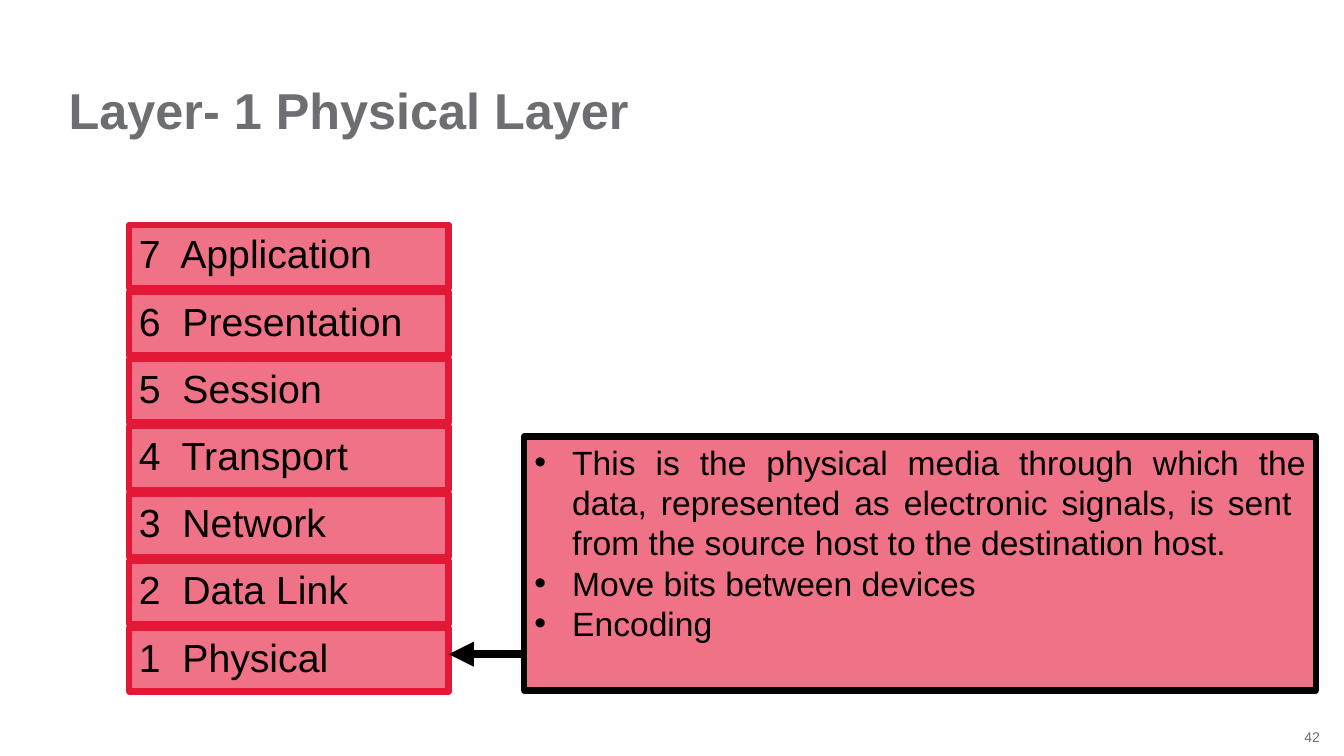
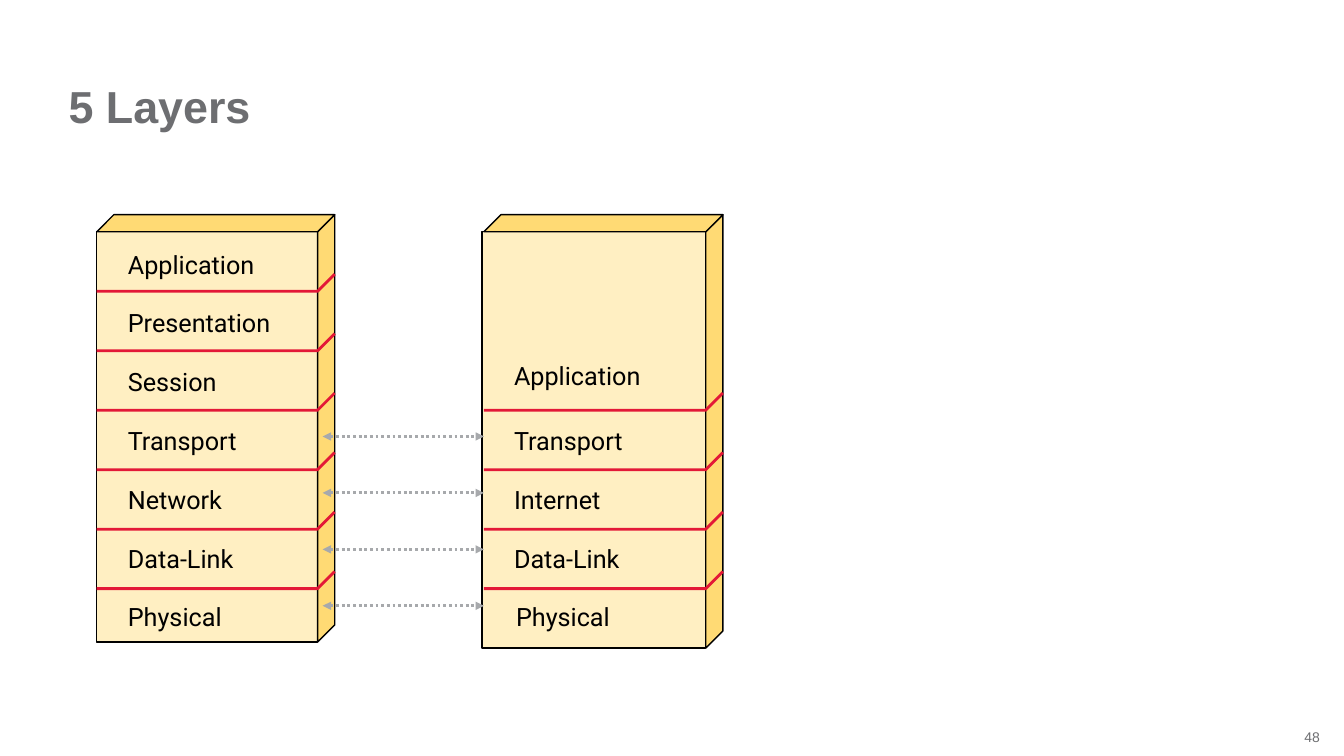
"""Build two slides on the physical layer and on the seven and five layer stacks."""
from dataclasses import dataclass

from lxml.etree import SubElement
from pptx import Presentation
from pptx.dml.color import RGBColor
from pptx.enum.dml import MSO_LINE
from pptx.enum.shapes import MSO_CONNECTOR, MSO_SHAPE
from pptx.enum.text import MSO_ANCHOR, MSO_AUTO_SIZE, PP_ALIGN
from pptx.oxml.ns import qn
from pptx.util import Inches, Pt


@dataclass(frozen=True)
class Theme:
    font: str = "Arial"
    label_font: str = "Roboto"
    grey: RGBColor = RGBColor.from_string("6D6E71")
    silver: RGBColor = RGBColor.from_string("A7A9AC")
    black: RGBColor = RGBColor.from_string("000000")
    red: RGBColor = RGBColor.from_string("E31837")
    pink: RGBColor = RGBColor.from_string("F07286")
    cream: RGBColor = RGBColor.from_string("FFEFC2")
    gold: RGBColor = RGBColor.from_string("FFDA74")
    title: int = 36
    title_small: int = 32
    layer: int = 28
    body: int = 24
    label: int = 18
    number: int = 10


T = Theme()


def paint(shape, fill, line, width):
    if fill is None:
        shape.fill.background()
    else:
        shape.fill.solid()
        shape.fill.fore_color.rgb = fill
    shape.line.color.rgb = line
    shape.line.width = Pt(width)
    shape.shadow.inherit = False


def write(shape, lines, size, color=T.black, font=T.font, align=PP_ALIGN.LEFT, bold=False):
    tf = shape.text_frame
    tf.text = "\n".join(lines)
    tf.word_wrap = True
    tf.auto_size = MSO_AUTO_SIZE.NONE
    tf.vertical_anchor = MSO_ANCHOR.TOP
    for p in tf.paragraphs:
        p.alignment = align
        p.space_before = Pt(0)
        p.font.name = font
        p.font.size = Pt(size)
        p.font.bold = bold
        p.font.color.rgb = color
    return tf


prs = Presentation()
prs.slide_width, prs.slide_height = Inches(13.33), Inches(7.5)

TITLE_AND_CONTENT, TITLE_ONLY = 1, 5
for layout, title, size, number in [
    (TITLE_AND_CONTENT, "Layer- 1 Physical Layer", T.title, "42"),
    (TITLE_ONLY, "5 Layers", T.title_small, "48"),
]:
    s = prs.slides.add_slide(prs.slide_layouts[layout])
    head = s.shapes.title
    head.left, head.top, head.width, head.height = map(Inches, (0.68, 0.78, 11.97, 0.54))
    page = s.shapes.add_textbox(Inches(12.59), Inches(7.23), Inches(0.5), Inches(0.17))
    for tf in (write(head, [title], size, T.grey, bold=True),
               write(page, [number], T.number, T.grey, align=PP_ALIGN.RIGHT)):
        tf.margin_left = tf.margin_top = tf.margin_right = tf.margin_bottom = 0
    page.text_frame.vertical_anchor = MSO_ANCHOR.MIDDLE

physical, stacks = prs.slides

layers = ["Application", "Presentation", "Session", "Transport", "Network", "Data Link", "Physical"]
for i, name in enumerate(layers):
    box = physical.shapes.add_shape(
        MSO_SHAPE.RECTANGLE, Inches(1.28), Inches(2.23 + i * 2 / 3), Inches(3.17), Inches(0.63))
    paint(box, T.pink, T.red, 4.5)
    write(box, [f"{len(layers) - i}  {name}"], T.layer)

body = physical.placeholders[1]
body.left, body.top, body.width, body.height = map(Inches, (5.2, 4.33, 7.85, 2.52))
body.fill.solid()
body.fill.fore_color.rgb = T.pink
body.line.color.rgb = T.black
body.line.width = Pt(4.5)
write(body, [
    "This is the physical media through which the data, represented as electronic signals, "
    "is sent  from the source host to the destination host.",
    "Move bits between devices",
    "Encoding",
], T.body, align=PP_ALIGN.JUSTIFY)

TOP, DEPTH, ROWS = 2.3, 0.17, 7
seven = ["Application", "Presentation", "Session", "Transport", "Network", "Data-Link", "Physical"]
five = ["Application", "Transport", "Internet", "Data-Link", "Physical"]
for face, left, right, bottom, text_left, names, nudges in [
    (0.96, 0.96, 3.15, 6.37, 1.17, seven, {}),
    (4.78, 4.8, 7, 6.43, 5, five, {"Application": (0, -0.06), "Physical": (0.02, 0)}),
]:
    front = stacks.shapes.add_shape(
        MSO_SHAPE.RECTANGLE, Inches(face), Inches(TOP), Inches(right - face), Inches(bottom - TOP))
    paint(front, T.cream, T.black, 1)

    back, first = right + DEPTH, ROWS - len(names)
    side = [(back, TOP - DEPTH), (right, TOP), (right, bottom), (back, bottom - DEPTH)]
    lid = [(left, TOP), (left + DEPTH, TOP - DEPTH), (back, TOP - DEPTH), (right, TOP)]
    outlines = [(side, T.gold, T.black, 1), (lid, T.gold, T.black, 1)]
    for row in range(first, ROWS - 1):
        y = 2.89 + 0.59 * row
        outlines.append(([(left, y), (right, y), (back, y - DEPTH)], None, T.red, 2))
    for points, fill, line, width in outlines:
        start, *rest = [(Inches(x), Inches(y)) for x, y in points]
        fb = stacks.shapes.build_freeform(*start)
        fb.add_line_segments(rest, close=fill is not None)
        paint(fb.convert_to_shape(), fill, line, width)

    for row, name in enumerate(names, first):
        dx, dy = nudges.get(name, (0, 0))
        label = stacks.shapes.add_textbox(
            Inches(text_left + dx), Inches(2.42 + row * 7 / 12 + dy), Inches(1.73), Inches(0.4))
        write(label, [name], T.label, font=T.label_font)

arrows = [(physical, 5.2, 4.45, 6.49, T.black, 6, None, ["a:tailEnd"])]
for i in range(4):
    arrows.append((stacks, 3.2, 4.8, 4.33 + i * 0.56, T.silver, 2, MSO_LINE.ROUND_DOT,
                   ["a:headEnd", "a:tailEnd"]))
for s, x1, x2, y, color, width, dash, ends in arrows:
    c = s.shapes.add_connector(MSO_CONNECTOR.STRAIGHT, Inches(x1), Inches(y), Inches(x2), Inches(y))
    c.line.color.rgb = color
    c.line.width = Pt(width)
    if dash:
        c.line.dash_style = dash
    spPr = c._element.spPr
    for end in ends:
        SubElement(spPr.find(qn("a:ln")), qn(end), type="triangle")
    SubElement(spPr, qn("a:effectLst"))

prs.save("out.pptx")
